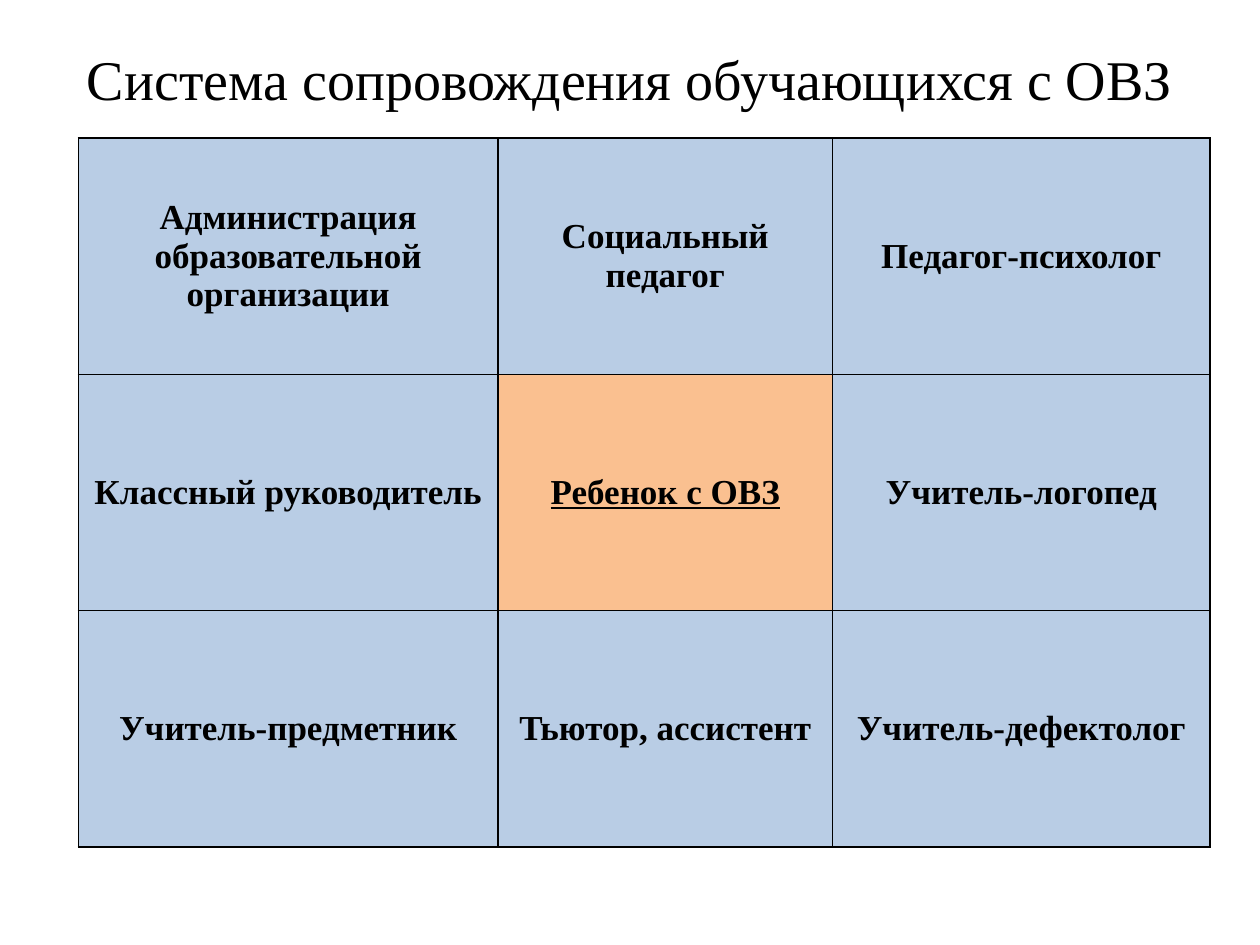
from lxml import etree
from pptx import Presentation
from pptx.dml.color import RGBColor
from pptx.enum import text
from pptx.oxml import ns
from pptx.util import Pt

TITLE = "Система сопровождения обучающихся с ОВЗ"
ROLES = [
    ["Администрация образовательной организации", "Социальный педагог", "Педагог-психолог"],
    ["Классный руководитель", "Ребенок с ОВЗ", "Учитель-логопед"],
    ["Учитель-предметник", "Тьютор, ассистент", "Учитель-дефектолог"],
]
CHILD = "Ребенок с ОВЗ"
WIDTHS = [239.8, 191.2, 215.7]
HEIGHT = 135.1
THEME = {
    "font": "Times New Roman",
    "head": 32,
    "body": 20,
    "ink": "000000",
    "role": "B9CDE5",
    "child": "FAC090",
    "line": 1,
}


def color(name):
    return RGBColor.from_string(THEME[name])


def style(para, size, bold=False):
    para.alignment = text.PP_ALIGN.CENTER
    font = para.font
    font.name = THEME["font"]
    font.size = Pt(THEME[size])
    font.bold = bold
    font.color.rgb = color("ink")


def border(cell):
    props = cell._tc.get_or_add_tcPr()
    for side in ("lnL", "lnR", "lnT", "lnB"):
        line = etree.SubElement(props, ns.qn(f"a:{side}"), w=str(Pt(THEME["line"])))
        fill = etree.SubElement(line, ns.qn("a:solidFill"))
        etree.SubElement(fill, ns.qn("a:srgbClr"), val=THEME["ink"])


def add_title(slide):
    box = slide.shapes.add_textbox(Pt(36), Pt(21.6), Pt(648), Pt(46))
    frame = box.text_frame
    frame.word_wrap = True
    frame.vertical_anchor = text.MSO_ANCHOR.MIDDLE
    frame.text = TITLE
    style(frame.paragraphs[0], "head")


def fill_cell(cell, label):
    border(cell)
    cell.fill.solid()
    cell.fill.fore_color.rgb = color("child" if label == CHILD else "role")
    cell.margin_left = cell.margin_right = Pt(5)
    cell.margin_top = cell.margin_bottom = 0
    cell.vertical_anchor = text.MSO_ANCHOR.MIDDLE
    cell.text = label
    para = cell.text_frame.paragraphs[0]
    style(para, "body", bold=True)
    if label == CHILD:
        para.runs[0].font.underline = True


def add_grid(slide):
    rows, cols = len(ROLES), len(WIDTHS)
    frame = slide.shapes.add_table(
        rows, cols, Pt(44.8), Pt(78.8), Pt(sum(WIDTHS)), Pt(HEIGHT * rows)
    )
    table = frame.table
    for col, width in zip(table.columns, WIDTHS):
        col.width = Pt(width)
    for row, labels in zip(table.rows, ROLES):
        row.height = Pt(HEIGHT)
        for cell, label in zip(row.cells, labels):
            fill_cell(cell, label)


def main():
    deck = Presentation()
    deck.slide_width, deck.slide_height = Pt(720), Pt(540)
    slide = deck.slides.add_slide(deck.slide_layouts[6])
    add_title(slide)
    add_grid(slide)
    deck.save("out.pptx")


if __name__ == "__main__":
    main()
